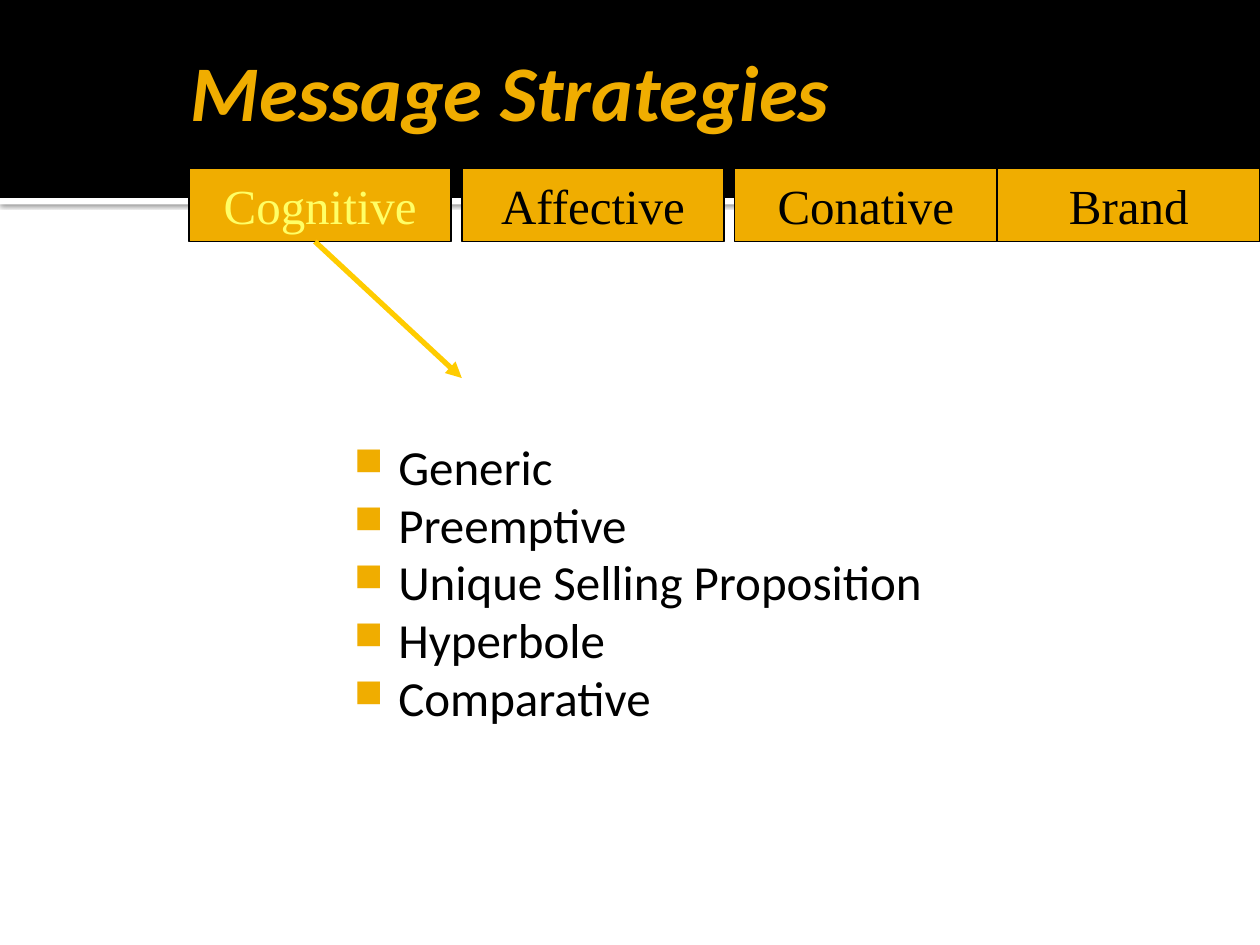
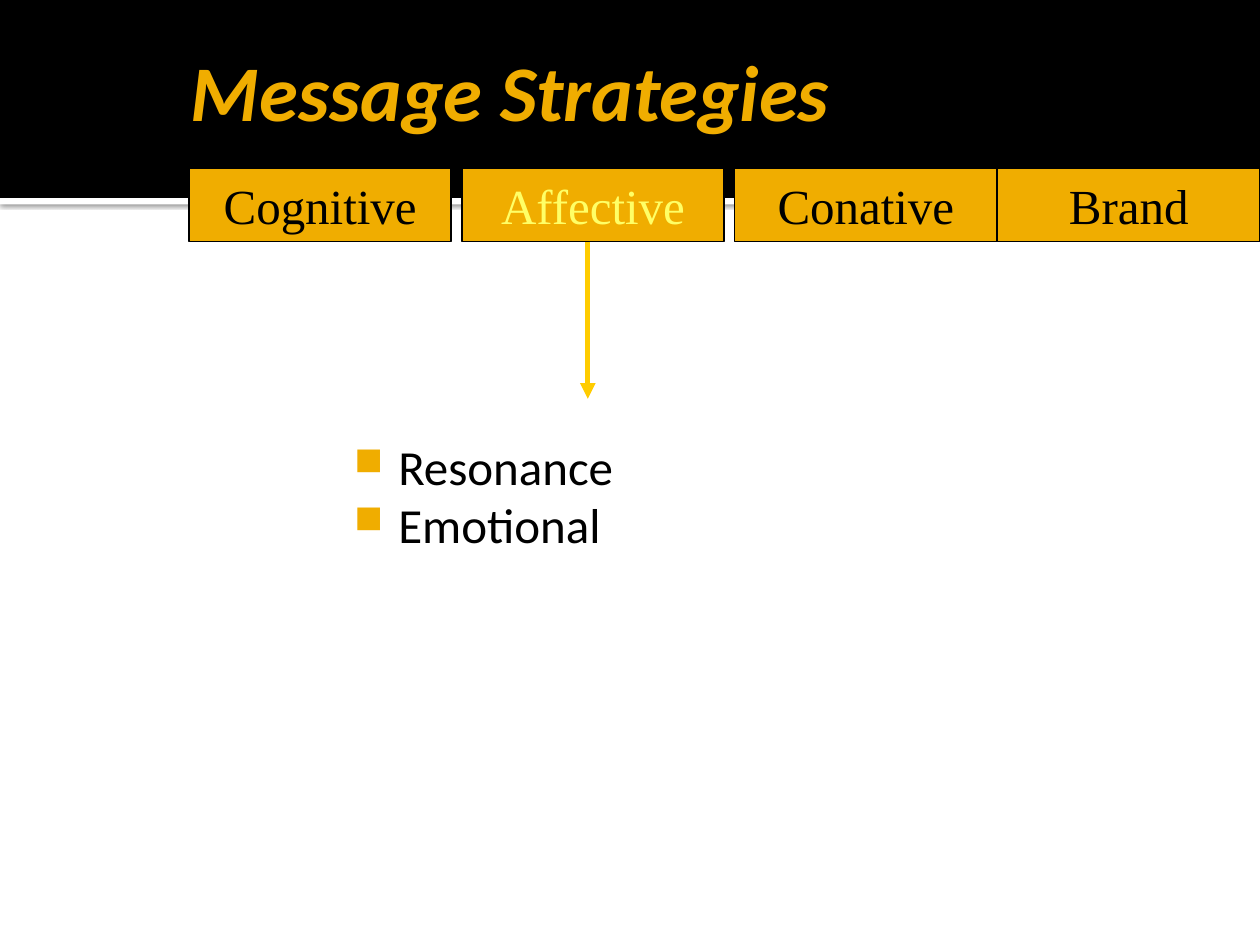
from lxml import etree
from pptx import Presentation
from pptx.dml.color import RGBColor
from pptx.enum.shapes import MSO_CONNECTOR, MSO_SHAPE
from pptx.enum.text import MSO_ANCHOR, MSO_AUTO_SIZE, PP_ALIGN
from pptx.oxml.ns import qn
from pptx.util import Cm, Pt

RECTANGLE = MSO_SHAPE.RECTANGLE
STRAIGHT = MSO_CONNECTOR.STRAIGHT
MIDDLE, TOP = MSO_ANCHOR.MIDDLE, MSO_ANCHOR.TOP
LEFT, CENTER = PP_ALIGN.LEFT, PP_ALIGN.CENTER
NO_AUTOFIT = MSO_AUTO_SIZE.NONE
TITLE_ONLY = 5

COLORS = {
    "black": "000000",
    "white": "FFFFFF",
    "gold": "F0AD00",
    "highlight": "FFFF66",
    "arrow": "FFCC00",
}
SANS, SERIF = "Calibri", "Times New Roman"

# Measures in centimetres
PAGE_W, PAGE_H = 25.4, 19.05
HEADER_H, STRIP_H = 3.99, 0.13
TAB_W, TAB_H, TAB_TOP = 5.29, 1.48, 3.39
TAB_LEFT, TAB_PITCH = 3.81, 5.5
ARROW_INSET = 2.54

STRATEGIES = ["Cognitive", "Affective", "Conative", "Brand"]

# Chosen strategy, its message types, and the arrow's run and drop
SLIDES = [
    ("Cognitive",
     ["Generic", "Preemptive", "Unique Selling Proposition", "Hyperbole", "Comparative"],
     (2.96, 2.75)),
    ("Affective", ["Resonance", "Emotional"], (0, 3.17)),
]


def rgb(name):
    return RGBColor.from_string(COLORS[name])


def add_xml(parent, tag, **attributes):
    return etree.SubElement(parent, qn(tag), attributes)


class Deck:
    def __init__(self):
        self.presentation = Presentation()
        self.presentation.slide_width = Cm(PAGE_W)
        self.presentation.slide_height = Cm(PAGE_H)
        self.slide = None

    def new_slide(self):
        layout = self.presentation.slide_layouts[TITLE_ONLY]
        self.slide = self.presentation.slides.add_slide(layout)

    def run(self, paragraph, text, size, font, color, bold=False, italic=False):
        run = paragraph.add_run()
        run.text = text
        run.font.size, run.font.name = Pt(size), font
        run.font.bold, run.font.italic = bold, italic
        run.font.color.rgb = rgb(color)

    def frame(self, shape, insets, anchor, wrap=True):
        frame = shape.text_frame
        frame.auto_size = NO_AUTOFIT
        frame.word_wrap = wrap
        frame.vertical_anchor = anchor
        (frame.margin_left, frame.margin_top,
         frame.margin_right, frame.margin_bottom) = map(Cm, insets)
        return frame

    def rectangle(self, left, top, width, height, fill, line=None):
        shape = self.slide.shapes.add_shape(
            RECTANGLE, Cm(left), Cm(top), Cm(width), Cm(height))
        shape.shadow.inherit = False
        shape.fill.solid()
        shape.fill.fore_color.rgb = rgb(fill)
        if line:
            shape.line.color.rgb = rgb(line)
            shape.line.width = Pt(1)
        else:
            shape.line.fill.background()
        return shape

    def header(self):
        strip = self.rectangle(0, HEADER_H, PAGE_W, STRIP_H, "white")
        effects = strip.element.spPr.find(qn("a:effectLst"))
        shadow = add_xml(effects, "a:outerShdw", blurRad=str(Pt(2.5)),
                         dist=str(Pt(0.8)), dir="5400000", rotWithShape="0")
        color = add_xml(shadow, "a:srgbClr", val=COLORS["black"])
        add_xml(color, "a:alpha", val="60000")
        band = self.rectangle(0, 0, PAGE_W, HEADER_H, "black")
        # Both bands lie behind the title
        tree = self.slide.shapes.element
        for position, part in enumerate((strip, band), start=2):
            tree.insert(position, part.element)

    def title(self, text):
        title = self.slide.shapes.title
        title.left, title.top = Cm(3.6), Cm(0.64)
        title.width, title.height = Cm(21.6), Cm(2.33)
        frame = self.frame(title, (0.25, 0.13, 0.13, 0.13), MIDDLE)
        paragraph = frame.paragraphs[0]
        paragraph.alignment = LEFT
        self.run(paragraph, text, 45, SANS, "gold", bold=True, italic=True)

    def bullets(self, items):
        box = self.slide.shapes.add_textbox(Cm(6.56), Cm(8.68), Cm(13.12), Cm(8.26))
        frame = self.frame(box, (0.25, 0.25, 0.25, 0.13), TOP)
        for index, item in enumerate(items):
            paragraph = frame.add_paragraph() if index else frame.paragraphs[0]
            paragraph.line_spacing = 0.9
            paragraph.space_before = Pt(2.8)
            self.run(paragraph, item, 28, SANS, "black")
            properties = paragraph._p.get_or_add_pPr()
            properties.set("marL", str(Cm(1.22)))
            properties.set("indent", str(Cm(-0.89)))
            color = add_xml(properties, "a:buClr")
            add_xml(color, "a:srgbClr", val=COLORS["gold"])
            add_xml(properties, "a:buSzPct", val="80000")
            add_xml(properties, "a:buChar", char="■")

    def tab(self, left, label, chosen):
        tab = self.rectangle(left, TAB_TOP, TAB_W, TAB_H, "gold", "black")
        frame = self.frame(tab, (0.25, 0.13, 0.25, 0.13), MIDDLE, wrap=False)
        paragraph = frame.paragraphs[0]
        paragraph.alignment = CENTER
        self.run(paragraph, label, 28, SERIF, "highlight" if chosen else "black")

    def arrow(self, left, top, across, down):
        arrow = self.slide.shapes.add_connector(
            STRAIGHT, Cm(left), Cm(top), Cm(left + across), Cm(top + down))
        arrow.line.color.rgb = rgb("arrow")
        arrow.line.width = Pt(3)
        add_xml(arrow.line._get_or_add_ln(), "a:tailEnd", type="triangle")
        add_xml(arrow._element.spPr, "a:effectLst")


def main():
    deck = Deck()
    # The last tab is flush with the right edge
    tab_lefts = [min(TAB_LEFT + i * TAB_PITCH, PAGE_W - TAB_W)
                 for i in range(len(STRATEGIES))]

    for chosen, message_types, (across, down) in SLIDES:
        deck.new_slide()
        deck.header()
        deck.title("Message Strategies")
        deck.bullets(message_types)
        for left, strategy in zip(tab_lefts, STRATEGIES):
            deck.tab(left, strategy, strategy == chosen)
        arrow_left = tab_lefts[STRATEGIES.index(chosen)] + ARROW_INSET
        deck.arrow(arrow_left, TAB_TOP + TAB_H, across, down)

    deck.presentation.save("out.pptx")


if __name__ == "__main__":
    main()
